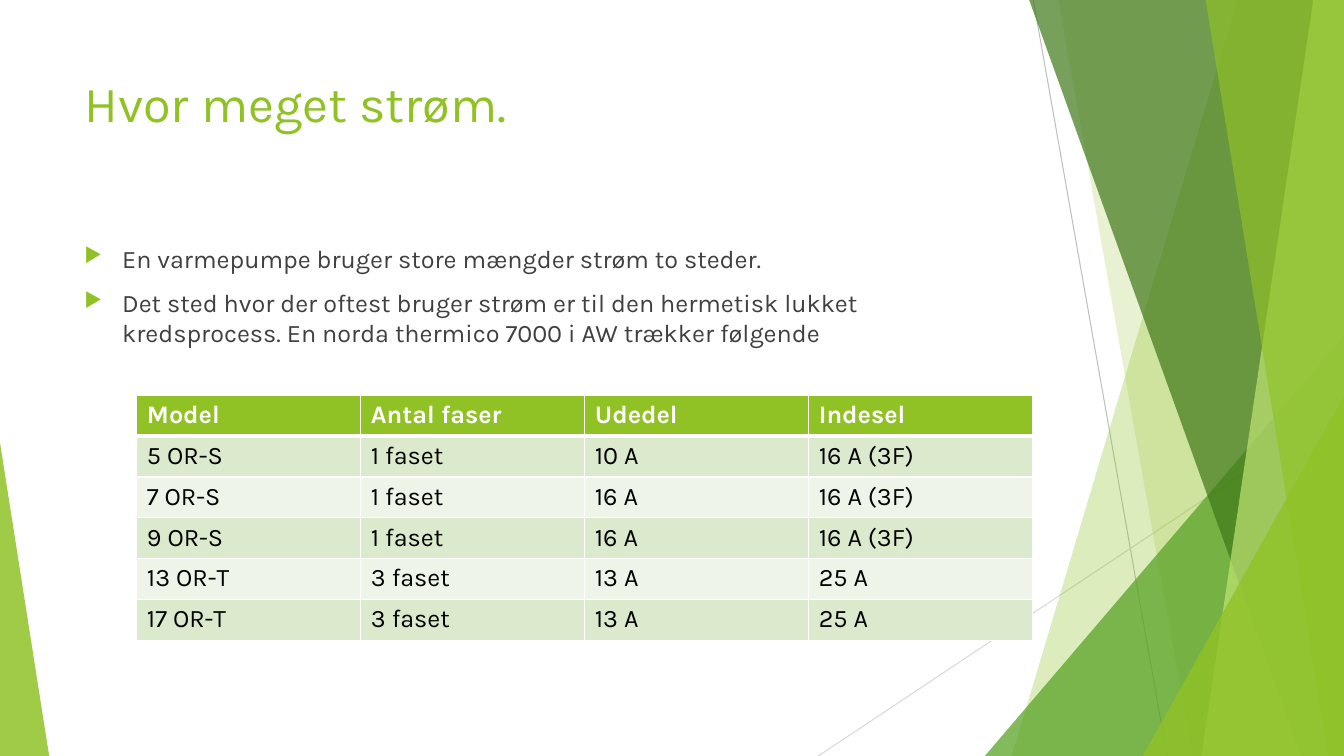
from lxml import etree
from pptx import Presentation
from pptx import util as u
from pptx.dml.color import RGBColor
from pptx.enum import shapes, text
from pptx.oxml.ns import qn

FONT = "Karla"
WHITE = RGBColor(0xFF, 0xFF, 0xFF)
BLACK = RGBColor(0x00, 0x00, 0x00)
DARK_GRAY = RGBColor(0x40, 0x40, 0x40)
MID_GRAY = RGBColor(0xBF, 0xBF, 0xBF)
LIGHT_GRAY = RGBColor(0xD9, 0xD9, 0xD9)
LIME = RGBColor(0x90, 0xC2, 0x26)
PALE_LIME = RGBColor(0xC0, 0xE4, 0x74)
GREEN = RGBColor(0x54, 0xA0, 0x21)
DARK_GREEN = RGBColor(0x3F, 0x78, 0x19)
ROW_TINTS = (RGBColor(0xDB, 0xE9, 0xCD), RGBColor(0xEE, 0xF4, 0xE8))

WIDTH, HEIGHT = 33.87, 19.05
TITLE = "Hvor meget strøm."
BULLETS = [
    "En varmepumpe bruger store mængder strøm to steder.",
    "Det sted hvor der oftest bruger strøm er til den hermetisk lukket "
    "kredsprocess. En norda thermico 7000 i AW trækker følgende",
]
POWER_ROWS = [
    ("Model", "Antal faser", "Udedel", "Indesel"),
    ("5 OR-S", "1 faset", "10 A", "16 A (3F)"),
    ("7 OR-S", "1 faset", "16 A", "16 A (3F)"),
    ("9 OR-S", "1 faset", "16 A", "16 A (3F)"),
    ("13 OR-T", "3 faset", "13 A", "25 A"),
    ("17 OR-T", "3 faset", "13 A", "25 A"),
]


def add_line(slide, start, end, color):
    line = slide.shapes.add_connector(
        shapes.MSO_CONNECTOR.STRAIGHT, *map(u.Cm, start + end))
    line.line.color.rgb = color
    line.line.width = u.Pt(0.75)
    etree.SubElement(line._element.spPr, qn("a:effectLst"))


def paint(shape, color, opacity):
    """Give a shape a see-through fill, no outline and no shadow."""
    shape.shadow.inherit = False
    shape.line.fill.background()
    shape.fill.solid()
    shape.fill.fore_color.rgb = color
    color_node = shape._element.spPr.find(qn("a:solidFill"))[0]
    etree.SubElement(color_node, qn("a:alpha"), val=str(opacity * 1000))


def add_band(slide, top_x, bottom_x, color, opacity):
    """Fill from a slanted left edge to the right side of the slide."""
    top = u.Cm(-0.02)
    builder = slide.shapes.build_freeform(u.Cm(top_x), top)
    builder.add_line_segments([
        (u.Cm(WIDTH), top),
        (u.Cm(WIDTH), u.Cm(HEIGHT)),
        (u.Cm(bottom_x), u.Cm(HEIGHT)),
    ])
    paint(builder.convert_to_shape(), color, opacity)


def add_corner(slide, left, top, width, apex, color, opacity):
    """Add a triangle standing on the slide's lower edge."""
    triangle = slide.shapes.add_shape(
        shapes.MSO_SHAPE.ISOSCELES_TRIANGLE,
        *map(u.Cm, (left, top, width, HEIGHT - top)))
    triangle.adjustments[0] = apex
    paint(triangle, color, opacity)


def write(paragraph, content, size=18, color=BLACK, bold=False):
    run = paragraph.add_run()
    run.text = content
    run.font.name = FONT
    run.font.size = u.Pt(size)
    run.font.color.rgb = color
    run.font.bold = bold


def add_text_frame(slide, left, top, width, height):
    frame = slide.shapes.add_textbox(
        *map(u.Cm, (left, top, width, height))).text_frame
    frame.word_wrap = True
    frame.vertical_anchor = text.MSO_ANCHOR.TOP
    return frame


def set_bullet(paragraph):
    properties = paragraph._p.get_or_add_pPr()
    indent = u.Cm(0.95)
    properties.set("marL", str(indent))
    properties.set("indent", str(-indent))
    color = etree.SubElement(properties, qn("a:buClr"))
    etree.SubElement(color, qn("a:srgbClr"), val=str(LIME))
    etree.SubElement(properties, qn("a:buSzPct"), val="80000")
    etree.SubElement(properties, qn("a:buChar"), char="▶")


def add_bullets(slide):
    frame = add_text_frame(slide, 1.88, 6, 23.88, 10.77)
    for index, content in enumerate(BULLETS):
        paragraph = frame.add_paragraph() if index else frame.paragraphs[0]
        paragraph.space_before = u.Pt(10)
        set_bullet(paragraph)
        write(paragraph, content, color=DARK_GRAY)


def set_borders(cell, top, bottom):
    properties = cell._tc.get_or_add_tcPr()
    for side, points in (("L", 1), ("R", 1), ("T", top), ("B", bottom)):
        border = etree.SubElement(
            properties, qn("a:ln" + side), w=str(u.Pt(points)))
        fill = etree.SubElement(border, qn("a:solidFill"))
        etree.SubElement(fill, qn("a:srgbClr"), val=str(WHITE))


def add_power_table(slide):
    column_count = len(POWER_ROWS[0])
    column_width, row_height = 5.645, 1.03
    table = slide.shapes.add_table(
        len(POWER_ROWS), column_count, u.Cm(3.45), u.Cm(9.96),
        u.Cm(column_width * column_count),
        u.Cm(row_height * len(POWER_ROWS))).table
    for row_index, values in enumerate(POWER_ROWS):
        header = row_index == 0
        for column_index, value in enumerate(values):
            cell = table.cell(row_index, column_index)
            set_borders(cell, top=3 if row_index == 1 else 1,
                        bottom=3 if header else 1)
            cell.fill.solid()
            cell.fill.fore_color.rgb = (
                LIME if header else ROW_TINTS[(row_index - 1) % 2])
            write(cell.text_frame.paragraphs[0], value,
                  color=WHITE if header else BLACK, bold=header)


def add_decoration(slide):
    add_line(slide, (26.04, 0), (29.41, HEIGHT), MID_GRAY)
    add_line(slide, (WIDTH, 10.24), (20.62, HEIGHT), LIGHT_GRAY)
    add_band(slide, 31.19, 25.5, LIME, 30)
    add_band(slide, 26.67, 30.05, LIME, 20)
    add_corner(slide, 24.82, 8.46, 9.05, 1, GREEN, 72)
    add_band(slide, 25.93, 32.79, DARK_GREEN, 70)
    add_band(slide, 33.1, 30.28, PALE_LIME, 70)
    add_band(slide, 30.38, 33.48, LIME, 65)
    add_corner(slide, 28.8, 9.98, 5.07, 1, LIME, 80)
    add_corner(slide, 0, 11.15, 1.24, 0, LIME, 85)


def main():
    presentation = Presentation()
    presentation.slide_width = u.Cm(WIDTH)
    presentation.slide_height = u.Cm(HEIGHT)
    slide = presentation.slides.add_slide(presentation.slide_layouts[6])
    add_decoration(slide)
    title = add_text_frame(slide, 1.88, 1.7, 23.88, 3.66)
    write(title.paragraphs[0], TITLE, size=36, color=LIME)
    add_bullets(slide)
    add_power_table(slide)
    presentation.save("out.pptx")


if __name__ == "__main__":
    main()
